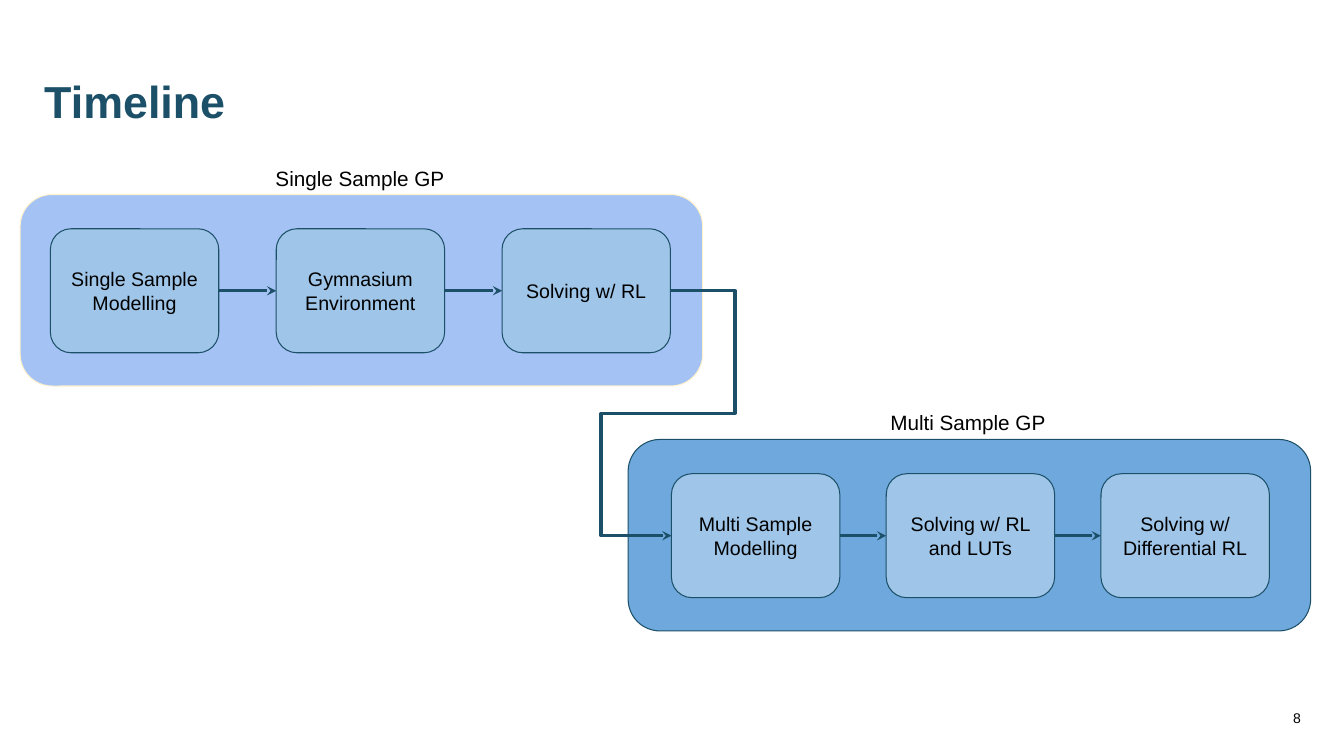
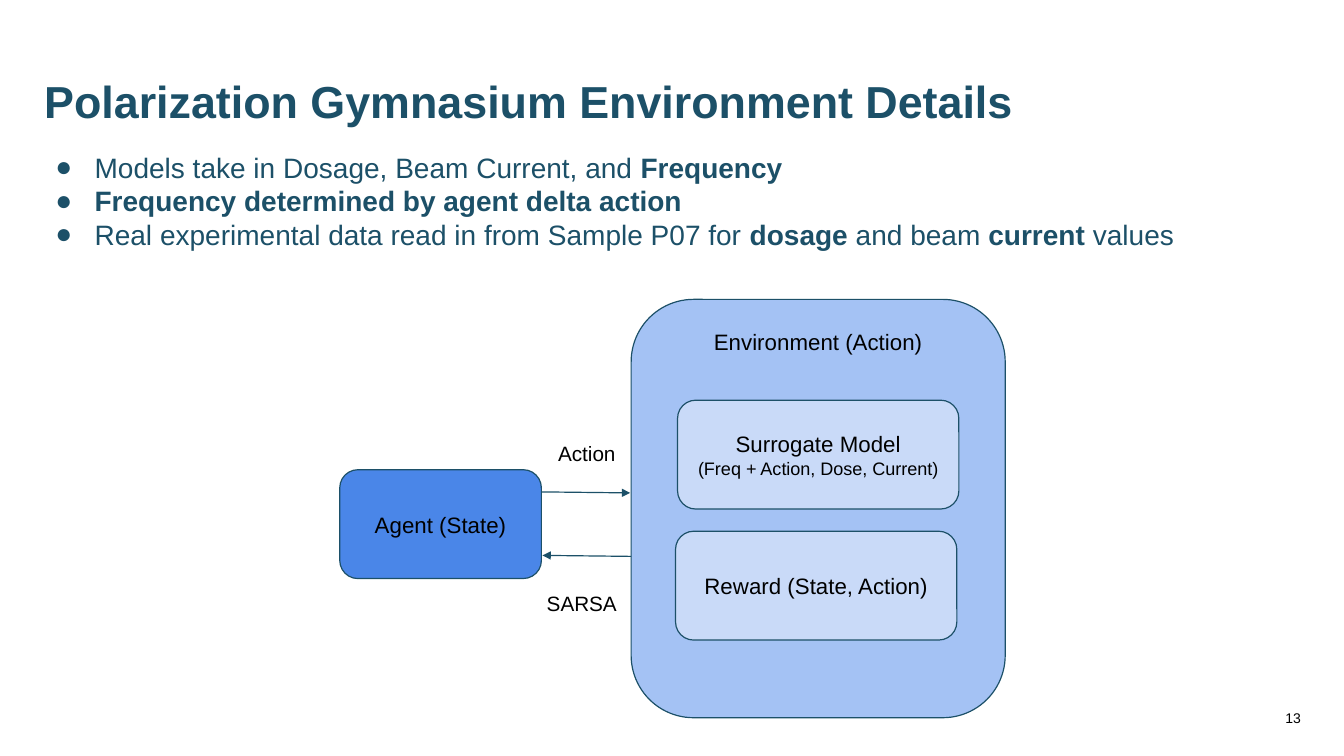
from lxml import etree
from pptx import Presentation, util as u
from pptx.dml.color import RGBColor
from pptx.enum import shapes, text
from pptx.oxml.ns import qn

PX = 9144
FONT = "Arial"
COLORS = {
    "ink": "1C5068",
    "text": "000000",
    "cream": "FFF2CC",
    "periwinkle": "A4C2F4",
    "sky": "6FA8DC",
    "step": "9FC5E8",
    "agent": "4A86E8",
    "pale": "C9DAF8",
}
LEFT, CENTER, RIGHT = text.PP_ALIGN.LEFT, text.PP_ALIGN.CENTER, text.PP_ALIGN.RIGHT
TOP, MIDDLE, BOTTOM = text.MSO_ANCHOR.TOP, text.MSO_ANCHOR.MIDDLE, text.MSO_ANCHOR.BOTTOM
LEFT_SITE, RIGHT_SITE = 1, 3
STEP_W, STEP_H = 167, 123


def px(*lengths):
    """Turn px lengths into EMU."""
    return [u.Emu(length * PX) for length in lengths]


def color(name):
    """Look up a palette colour."""
    return RGBColor.from_string(COLORS[name])


def style(run, size, ink="text", bold=False):
    """Set the font of a run."""
    run.font.name = FONT
    run.font.size = u.Pt(size)
    run.font.bold = bold
    run.font.color.rgb = color(ink)


def prepare(frame, anchor, inset_x, inset_y):
    """Set wrapping, anchor and insets of a text frame."""
    frame.word_wrap = True
    frame.vertical_anchor = anchor
    frame.margin_left = frame.margin_right = u.Emu(inset_x * PX)
    frame.margin_top = frame.margin_bottom = u.Emu(inset_y * PX)


def write(frame, wording, sizes, align=CENTER, anchor=MIDDLE, inset=(11, 11), ink="text", bold=False):
    """Fill a text frame, one size per line."""
    prepare(frame, anchor, *inset)
    frame.text = wording
    for paragraph, size in zip(frame.paragraphs, sizes):
        paragraph.alignment = align
        for run in paragraph.runs:
            style(run, size, ink, bold)


def label(slide, box, wording, size, **options):
    """Add a line of free text and return its frame."""
    frame = slide.shapes.add_textbox(*px(*box)).text_frame
    write(frame, wording, [size], **options)
    return frame


def rounded(slide, box, fill, line="ink", weight=0.75):
    """Add an empty rounded box."""
    card = slide.shapes.add_shape(shapes.MSO_SHAPE.ROUNDED_RECTANGLE, *px(*box))
    card.shadow.inherit = False
    card.fill.solid()
    card.fill.fore_color.rgb = color(fill)
    card.line.color.rgb = color(line)
    card.line.width = u.Pt(weight)
    return card


def arrow(slide, ends, weight, head, kind=shapes.MSO_CONNECTOR.STRAIGHT):
    """Add a connector with an arrowhead at its end."""
    link = slide.shapes.add_connector(kind, *px(*ends))
    link.line.color.rgb = color("ink")
    link.line.width = u.Pt(weight)
    etree.SubElement(link.line._get_or_add_ln(), qn("a:tailEnd"), type=head)
    etree.SubElement(link._element.spPr, qn("a:effectLst"))
    return link


def link_steps(slide, start, end, kind=shapes.MSO_CONNECTOR.STRAIGHT):
    """Join the right side of one step to the left side of another."""
    link = arrow(slide, (0, 0, 0, 0), 2.25, "stealth", kind)
    link.begin_connect(start, RIGHT_SITE)
    link.end_connect(end, LEFT_SITE)
    return link


def bend_around(link, adjustments):
    """Route an elbow out, across and back through five segments."""
    geometry = link._element.spPr.find(qn("a:prstGeom"))
    geometry.set("prst", "bentConnector5")
    guides = geometry.find(qn("a:avLst"))
    if guides is None:
        guides = etree.SubElement(geometry, qn("a:avLst"))
    for number, value in enumerate(adjustments, 1):
        etree.SubElement(guides, qn("a:gd"), name=f"adj{number}", fmla=f"val {value}")


def new_slide(deck, title, number):
    """Add a slide with the shared title and page number."""
    slide = deck.slides.add_slide(deck.slide_layouts[6])
    heading = label(slide, (34, 58, 1208, 74), title, 32, align=LEFT, anchor=BOTTOM,
                    inset=(10, 5), ink="ink", bold=True)
    heading.paragraphs[0].line_spacing = 0.9
    label(slide, (1000, 692, 300, 40), number, 10, align=RIGHT, inset=(10, 5))
    return slide


def phase(slide, box, heading, steps, fill, line, indent, pitch):
    """Draw a headed panel with a row of linked steps and return the steps."""
    left, top, width, height = box
    rounded(slide, box, fill, line)
    label(slide, (left + 85, top - 40, 504, 31), heading, 14.8, anchor=TOP)
    row = []
    for index, wording in enumerate(steps):
        step = rounded(slide, (left + indent + index * pitch, top + 34, STEP_W, STEP_H), "step")
        write(step.text_frame, wording, [14], inset=(10, 10))
        row.append(step)
    for start, end in zip(row, row[1:]):
        link_steps(slide, start, end)
    return row


def timeline_slide(deck):
    """Build the timeline of the two phases."""
    slide = new_slide(deck, "Timeline", "8")
    multi = phase(slide, (623, 436, 677, 190), "Multi Sample GP",
                  ["Multi Sample Modelling", "Solving w/ RL and LUTs", "Solving w/ Differential RL"],
                  "sky", "ink", 43, 213)
    single = phase(slide, (20, 193, 677, 190), "Single Sample GP",
                   ["Single Sample Modelling", "Gymnasium Environment", "Solving w/ RL"],
                   "periwinkle", "cream", 30, 224)
    elbow = link_steps(slide, single[-1], multi[0], shapes.MSO_CONNECTOR.ELBOW)
    bend_around(elbow, (6500000, 50000, -7000000))


def bullet_list(slide, box, items):
    """Write bullets whose runs are pairs of wording and boldness."""
    frame = slide.shapes.add_textbox(*px(*box)).text_frame
    prepare(frame, TOP, 10, 5)
    for index, runs in enumerate(items):
        paragraph = frame.add_paragraph() if index else frame.paragraphs[0]
        properties = paragraph._p.get_or_add_pPr()
        properties.set("marL", str(50 * PX))
        properties.set("indent", str(-39 * PX))
        tint = etree.SubElement(properties, qn("a:buClr"))
        etree.SubElement(tint, qn("a:srgbClr"), val=COLORS["ink"])
        etree.SubElement(properties, qn("a:buFont"), typeface=FONT)
        etree.SubElement(properties, qn("a:buChar"), char="●")
        for wording, bold in runs:
            run = paragraph.add_run()
            run.text = wording
            style(run, 20, "ink", bold)


def agent_loop(slide, left, top):
    """Draw the agent, its environment and the exchange between them."""
    cards = [
        ((289, 0, 371, 415), "periwinkle", "Environment (Action)", [15.9], TOP),
        ((335, 100, 279, 108), "pale", "Surrogate Model\n(Freq + Action, Dose, Current)", [15.9, 12.9], MIDDLE),
        ((333, 230, 279, 108), "pale", "Reward (State, Action)", [15.9], MIDDLE),
        ((0, 169, 200, 108), "agent", "Agent (State)", [15.9], MIDDLE),
    ]
    for (x, y, width, height), fill, wording, sizes, anchor in cards:
        card = rounded(slide, (left + x, top + y, width, height), fill, weight=0.85)
        write(card.text_frame, wording, sizes, anchor=anchor)
    for x1, y1, x2, y2 in [(200, 191, 288, 192), (289, 255, 201, 254)]:
        arrow(slide, (left + x1, top + y1, left + x2, top + y2), 0.85, "triangle")
    for x, y, width, wording in [(199, 129, 92, "Action"), (188, 278, 104, "SARSA")]:
        label(slide, (left + x, top + y, width, 52), wording, 14.8, anchor=TOP)


def environment_slide(deck):
    """Build the details of the environment."""
    slide = new_slide(deck, "Polarization Gymnasium Environment Details", "13")
    bullet_list(slide, (34, 144, 1266, 535), [
        [("Models take in Dosage, Beam Current, and ", False), ("Frequency", True)],
        [("Frequency determined by agent delta action", True)],
        [("Real experimental data read in from Sample P07 for ", False), ("dosage", True),
         (" and beam ", False), ("current", True), (" values", False)],
    ])
    agent_loop(slide, 337, 297)


def main():
    """Build and save the deck."""
    deck = Presentation()
    deck.slide_width, deck.slide_height = px(1333, 750)
    timeline_slide(deck)
    environment_slide(deck)
    deck.save("out.pptx")


if __name__ == "__main__":
    main()
